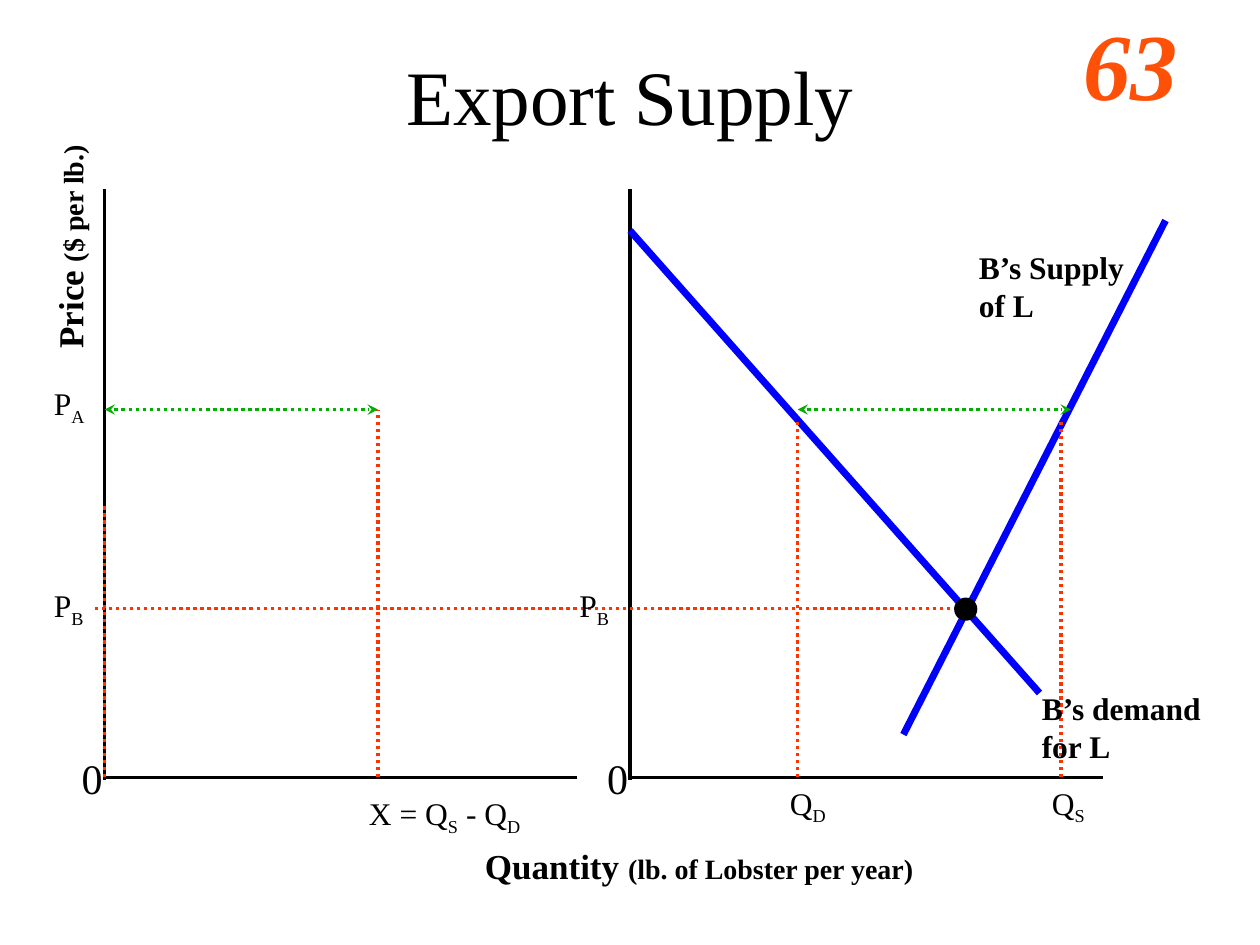
from lxml import etree
from pptx import Presentation
from pptx.dml.color import RGBColor
from pptx.enum.dml import MSO_LINE
from pptx.enum.shapes import MSO_CONNECTOR, MSO_SHAPE
from pptx.enum.text import MSO_ANCHOR, PP_ALIGN
from pptx.oxml.ns import qn
from pptx.util import Inches, Pt

STRAIGHT = MSO_CONNECTOR.STRAIGHT
DOTTED = MSO_LINE.ROUND_DOT  # written to the file as sysDot
OVAL = MSO_SHAPE.OVAL
MIDDLE = MSO_ANCHOR.MIDDLE
CENTER = PP_ALIGN.CENTER

FONT = "Times New Roman"
COLORS = {
    "ink": "000000",
    "curve": "0000FF",
    "guide": "FF3300",
    "trade": "00AE00",
    "number": "FF5008",
}

# Positions shared by the two graphs
ORIGINS = (0.83, 5)
AXIS_TOP, BASE = 1.5, 6.17
PRICE_A, PRICE_B = 3.25, 4.83
EXPORTS, DEMANDED, SUPPLIED = 3, 6.33, 8.42

deck = Presentation()
deck.slide_width, deck.slide_height = Inches(10), Inches(7.5)
page = deck.slides.add_slide(deck.slide_layouts[6])


def add_line(start, end, color, width=2, dotted=False, arrows=False):
    line = page.shapes.add_connector(STRAIGHT, *map(Inches, (*start, *end)))
    line.line.color.rgb = RGBColor.from_string(COLORS[color])
    line.line.width = Pt(width)
    if dotted:
        line.line.dash_style = DOTTED
    if arrows:
        outline = line.line._get_or_add_ln()
        for end_name in ("a:headEnd", "a:tailEnd"):
            etree.SubElement(outline, qn(end_name), type="stealth")
    etree.SubElement(line._element.spPr, qn("a:effectLst"))


def add_text(place, text, size=18, bold=False, wrap=True, color="ink"):
    """Add a text box; every second piece between bars is a subscript."""
    box = page.shapes.add_textbox(*map(Inches, place))
    frame = box.text_frame
    frame.word_wrap = wrap
    for index, row in enumerate(text.split("\n")):
        para = frame.add_paragraph() if index else frame.paragraphs[0]
        para.font.name = FONT
        para.font.size = Pt(size)
        para.font.bold = bold
        para.font.color.rgb = RGBColor.from_string(COLORS[color])
        for position, piece in enumerate(row.split("|")):
            span = para.add_run()
            span.text = piece
            if position % 2:
                span._r.get_or_add_rPr().set("baseline", "-25000")
    return box


# Heading and slide number
title = add_text((0.75, 0, 8.5, 1.5), "Export Supply", 44)
title.text_frame.vertical_anchor = MIDDLE
title.text_frame.paragraphs[0].alignment = CENTER
number = add_text((8.5, 0, 1.42, 1), "63", 54, bold=True, color="number")
number.text_frame.paragraphs[0].font.italic = True

# Axes
for origin in ORIGINS:
    add_line((origin, AXIS_TOP), (origin, BASE + 0.02), "ink")
    add_line((origin, BASE), (origin + 3.75, BASE), "ink")
    add_text((origin - 0.28, 5.92, 0.37, 0.5), "0", 24, wrap=False)

# Supply and demand curves
add_line((7.17, 5.83), (9.25, 1.75), "curve", 4)
add_line((ORIGINS[1], 1.83), (8.25, 5.5), "curve", 4)

# Dotted guides
for quantity, top in (
    (ORIGINS[0], 4), (EXPORTS, PRICE_A), (DEMANDED, 3.33), (SUPPLIED, 3.33),
):
    add_line((quantity, BASE), (quantity, top), "guide", dotted=True)
add_line((0.75, PRICE_B), (7.58, PRICE_B), "guide", dotted=True)

# Domestic equilibrium
equilibrium = page.shapes.add_shape(OVAL, *map(Inches, (7.58, 4.75, 0.17, 0.17)))
equilibrium.shadow.inherit = False
equilibrium.fill.solid()
equilibrium.fill.fore_color.rgb = RGBColor.from_string(COLORS["ink"])
equilibrium.line.color.rgb = RGBColor.from_string(COLORS["ink"])
equilibrium.line.width = Pt(1)

# Export quantity, the same length in both graphs
for start in (ORIGINS[0], DEMANDED):
    add_line((start, PRICE_A), (start + 2.17, PRICE_A), "trade",
             dotted=True, arrows=True)

# Price, quantity and curve labels
for place, label in (
    ((0.33, 3, 0.5, 0.4), "P|A"),
    ((0.33, 4.6, 0.5, 0.4), "P|B"),
    ((4.5, 4.6, 0.5, 0.4), "P|B"),
    ((2.83, 6.25, 1.75, 0.6), "X = Q|S| - Q|D"),
    ((6.17, 6.17, 0.67, 0.4), "Q|D"),
    ((8.25, 6.17, 0.75, 0.4), "Q|S"),
):
    add_text(place, label)
add_text((8.17, 5.42, 1.5, 0.7), "B’s demand for L", bold=True)
add_text((7.67, 1.92, 1.36, 0.7), "B’s Supply\nof L", bold=True, wrap=False)

# Axis titles, each with its unit in smaller type
for place, name, unit, rotation in (
    ((3.75, 6.65, 3.61, 0.43), "Quantity ", "(lb. of Lobster per year)", 0),
    ((-0.36, 1.74, 1.82, 0.43), "Price ", "($ per lb.)", 270),
):
    axis_title = add_text(place, name, 20, bold=True, wrap=False)
    axis_title.rotation = rotation
    span = axis_title.text_frame.paragraphs[0].add_run()
    span.text = unit
    span.font.size = Pt(16)

deck.save("out.pptx")
